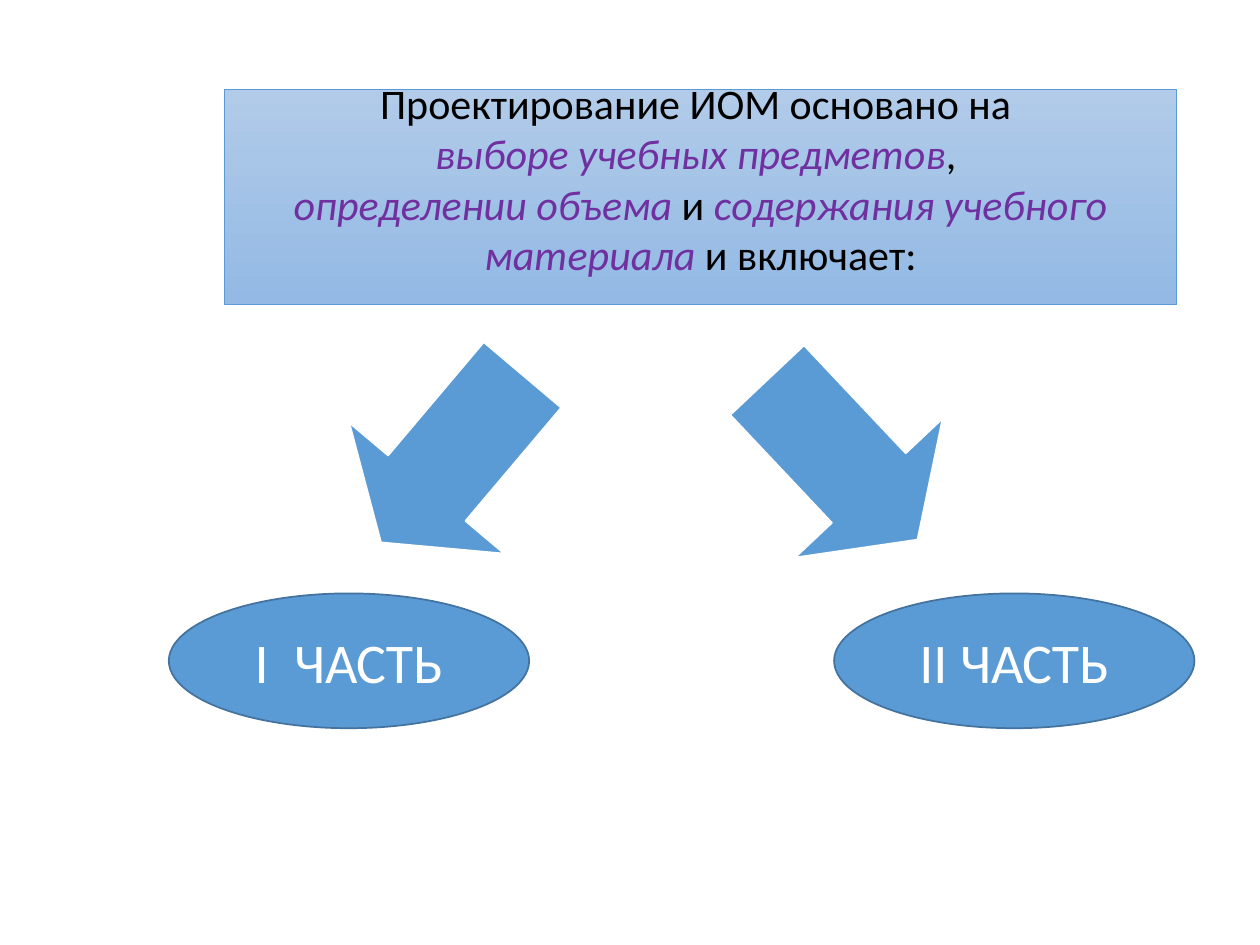
from pptx import Presentation
from pptx.dml.color import RGBColor
from pptx.enum.shapes import MSO_SHAPE as SHAPE
from pptx.enum.text import MSO_ANCHOR, PP_ALIGN
from pptx.util import Inches, Pt

COLORS = {
    "blue": "5B9BD5", "outline": "43739E", "white": "FFFFFF", "black": "000000",
    "purple": "7030A0", "grad_top": "B1CBE9", "grad_bottom": "93B9E4",
}

# Paragraphs of (text, emphasized) runs
INTRO = [
    [("Проектирование ИОМ основано на ", False)],
    [("выборе учебных предметов", True), (", ", False)],
    [("определении объема ", True), ("и ", False),
     ("содержания учебного материала", True), (" и включает:", False)],
]


def color(name):
    return RGBColor.from_string(COLORS[name])


def add_shape(s, kind, box, line, width):
    sp = s.shapes.add_shape(kind, *(Inches(v) for v in box))
    sp.shadow.inherit = False
    sp.fill.solid()
    sp.fill.fore_color.rgb = color("blue")
    sp.line.color.rgb = color(line)
    sp.line.width = Pt(width)
    return sp


def format_paragraph(p, size):
    p.alignment = PP_ALIGN.CENTER
    p.font.size = Pt(size)
    p.font.name = "Calibri"


def add_arrow(s, box, rotation):
    sp = add_shape(s, SHAPE.UP_ARROW, box, "white", 1)
    sp.adjustments[0] = 0.5
    sp.adjustments[1] = 0.35
    sp.rotation = rotation


def add_intro(s, box):
    sp = add_shape(s, SHAPE.RECTANGLE, box, "blue", 0.5)
    sp.fill.gradient()
    sp.fill.gradient_angle = 270
    for stop, name in zip(sp.fill.gradient_stops, ("grad_top", "grad_bottom")):
        stop.color.rgb = color(name)
    tf = sp.text_frame
    tf.word_wrap = True
    tf.vertical_anchor = MSO_ANCHOR.MIDDLE
    tf.margin_bottom = Inches(0.35)  # lifts the text above the middle
    for i, runs in enumerate(INTRO):
        p = tf.add_paragraph() if i else tf.paragraphs[0]
        format_paragraph(p, 24)
        for text, emphasized in runs:
            r = p.add_run()
            r.text = text
            r.font.italic = emphasized
            r.font.color.rgb = color("purple" if emphasized else "black")


def add_part(s, box, label):
    sp = add_shape(s, SHAPE.OVAL, box, "outline", 1)
    tf = sp.text_frame
    tf.word_wrap = True
    tf.vertical_anchor = MSO_ANCHOR.MIDDLE
    p = tf.paragraphs[0]
    p.text = label
    format_paragraph(p, 32)
    p.font.color.rgb = color("white")


def main():
    prs = Presentation()
    prs.slide_width, prs.slide_height = Inches(10), Inches(7.5)
    s = prs.slides.add_slide(prs.slide_layouts[6])

    # Arrows from the statement to its two parts
    for left, top, rotation in ((2.78, 2.77, 220.2), (5.88, 2.78, 136.7)):
        add_arrow(s, (left, top, 1.61, 1.74), rotation)

    # Statement
    add_intro(s, (1.78, 0.71, 7.56, 1.71))

    # Parts
    for left, label in ((1.34, "I  ЧАСТЬ"), (6.62, "II ЧАСТЬ")):
        add_part(s, (left, 4.71, 2.86, 1.07), label)

    prs.save("out.pptx")


if __name__ == "__main__":
    main()
